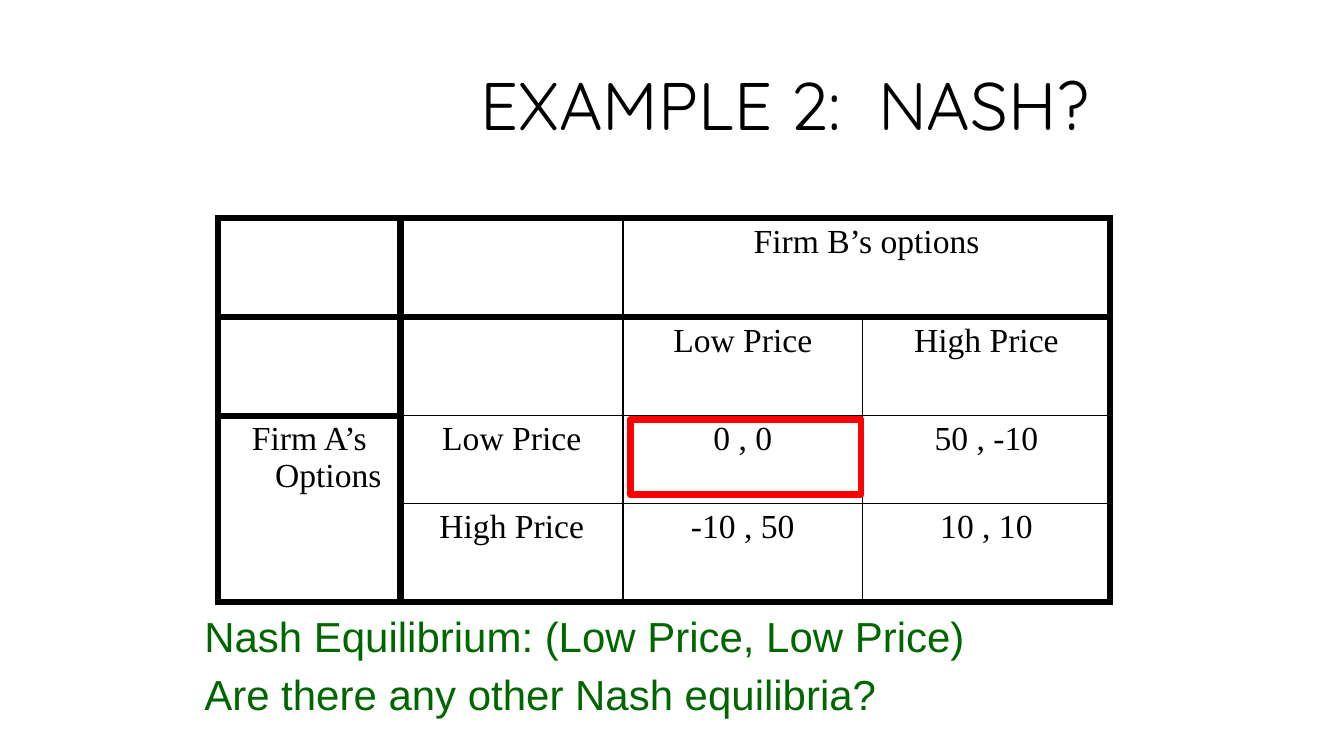
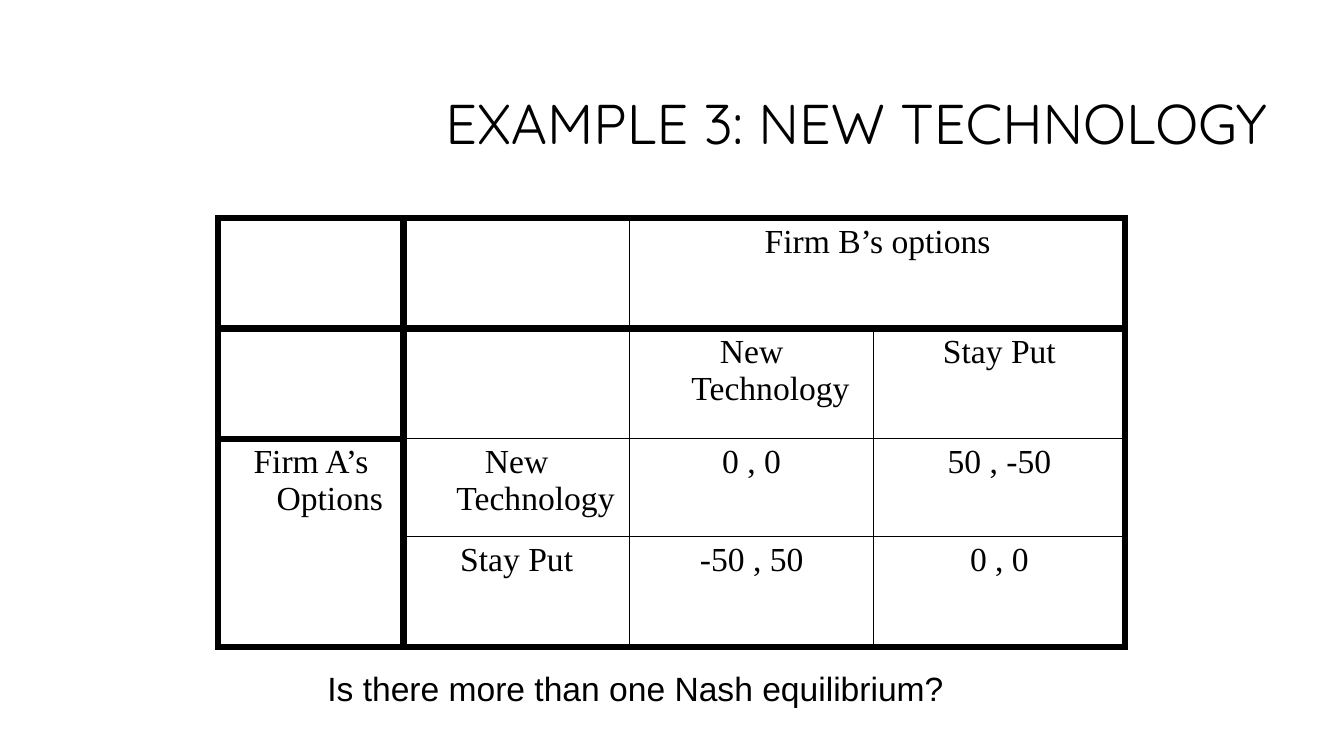
from lxml import etree
from pptx import Presentation
from pptx.dml.color import RGBColor as RGB
from pptx.enum.shapes import MSO_SHAPE as SHAPE
from pptx.enum.text import MSO_ANCHOR as ANCHOR, PP_ALIGN as ALIGN
from pptx.oxml.ns import qn
from pptx.util import Cm, Pt


class Deck:
    """Slides showing payoff tables in one shared style."""

    COLORS = {"ink": "000000", "answer": "006600", "mark": "FF0000"}
    TITLE_FONT, TABLE_FONT, BODY_FONT = "Quicksand", "Times New Roman", "Arial"
    COL_WEIGHTS = (1.81, 2.21, 2.38, 2.46)
    ROW_WEIGHTS = (0.98, 0.98, 0.87, 0.98)
    THICK, THIN = Pt(5), Pt(1)
    INDENT = Cm(0.95)

    def __init__(self):
        self.prs = Presentation()
        self.prs.slide_width, self.prs.slide_height = Cm(33.87), Cm(19.05)
        self.s = None

    def color(self, name):
        return RGB.from_string(self.COLORS[name])

    def add_slide(self):
        self.s = self.prs.slides.add_slide(self.prs.slide_layouts[6])

    def style(self, p, font, size, color="ink"):
        for r in p.runs:
            r.font.name, r.font.size = font, Pt(size)
            r.font.color.rgb = self.color(color)

    def text(self, lines, box, font, size, color="ink", wrap=True):
        tf = self.s.shapes.add_textbox(*map(Cm, box)).text_frame
        tf.word_wrap = wrap
        tf.text = "\n".join(lines)
        for i, p in enumerate(tf.paragraphs):
            if i:
                p.space_before = Pt(6)
            self.style(p, font, size, color)
        return tf

    def title(self, text, top, width, size):
        tf = self.text([text], (1.7, top, width, 3.81), self.TITLE_FONT, size)
        tf.vertical_anchor = ANCHOR.MIDDLE
        p = tf.paragraphs[0]
        p.alignment, p.line_spacing = ALIGN.RIGHT, 0.9

    def border(self, cell, row, col):
        last_row = row + cell.span_height >= len(self.ROW_WEIGHTS)
        last_col = col + cell.span_width >= len(self.COL_WEIGHTS)
        thick = {
            "a:lnL": col <= 1,
            "a:lnR": col == 0 or last_col,
            "a:lnT": col == 0 or row <= 1,
            "a:lnB": col == 0 or row == 0 or last_row,
        }
        pr = cell._tc.get_or_add_tcPr()
        for tag, is_thick in thick.items():
            width = self.THICK if is_thick else self.THIN
            ln = etree.SubElement(pr, qn(tag), w=str(int(width)))
            fill = etree.SubElement(ln, qn("a:solidFill"))
            etree.SubElement(fill, qn("a:srgbClr"), val=self.COLORS["ink"])
        cell.fill.background()

    def table(self, rows, width, height):
        frame = self.s.shapes.add_table(
            len(rows), len(rows[0]), Cm(5.5), Cm(5.5), Cm(width), Cm(height))
        tbl = frame.table
        tbl.first_row = tbl.horz_banding = False
        for col, weight in zip(tbl.columns, self.COL_WEIGHTS):
            col.width = Cm(width * weight / sum(self.COL_WEIGHTS))
        for row, weight in zip(tbl.rows, self.ROW_WEIGHTS):
            row.height = Cm(height * weight / sum(self.ROW_WEIGHTS))
        tbl.cell(0, 2).merge(tbl.cell(0, 3))
        tbl.cell(2, 0).merge(tbl.cell(3, 0))
        for i, row in enumerate(rows):
            for j, value in enumerate(row):
                cell = tbl.cell(i, j)
                self.border(cell, i, j)
                if value:
                    self.cell_text(cell, value)

    def cell_text(self, cell, value):
        cell.text_frame.text = value
        p = cell.text_frame.paragraphs[0]
        p.alignment = ALIGN.CENTER
        pr = p._p.get_or_add_pPr()
        pr.set("marL", str(int(self.INDENT)))
        pr.set("indent", str(-int(self.INDENT)))
        self.style(p, self.TABLE_FONT, 24)

    def payoffs(self, options, values, width, height):
        first, second = options
        self.table([
            ("", "", "Firm B’s options", ""),
            ("", "", first, second),
            ("Firm A’s Options", first, *values[0]),
            ("", second, *values[1]),
        ], width, height)

    def highlight(self, box):
        sp = self.s.shapes.add_shape(SHAPE.RECTANGLE, *map(Cm, box))
        sp.shadow.inherit = False
        sp.fill.background()
        sp.line.color.rgb = self.color("mark")
        sp.line.width = self.THICK


def main():
    deck = Deck()

    deck.add_slide()
    deck.title("EXAMPLE 2:  NASH?", 0.84, 26, 48)
    deck.payoffs(("Low Price", "High Price"),
                 (("0 , 0", "50 , -10"), ("-10 , 50", "10 , 10")), 22.48, 9.68)
    deck.highlight((15.88, 10.57, 5.82, 1.9))
    deck.text(["Nash Equilibrium: (Low Price, Low Price)",
               "Are there any other Nash equilibria?"],
              (4.9, 15.25, 25.4, 3.02), deck.BODY_FONT, 30, "answer")

    deck.add_slide()
    deck.title("EXAMPLE 3: NEW TECHNOLOGY", 1.27, 30.48, 40)
    deck.payoffs(("New Technology", "Stay Put"),
                 (("0 , 0", "50 , -50"), ("-50 , 50", "0 , 0")), 22.86, 10.8)
    deck.text(["Is there more than one Nash equilibrium?"],
              (8, 16.71, 16.2, 1.27), deck.BODY_FONT, 24, wrap=False)

    deck.prs.save("out.pptx")


if __name__ == "__main__":
    main()
